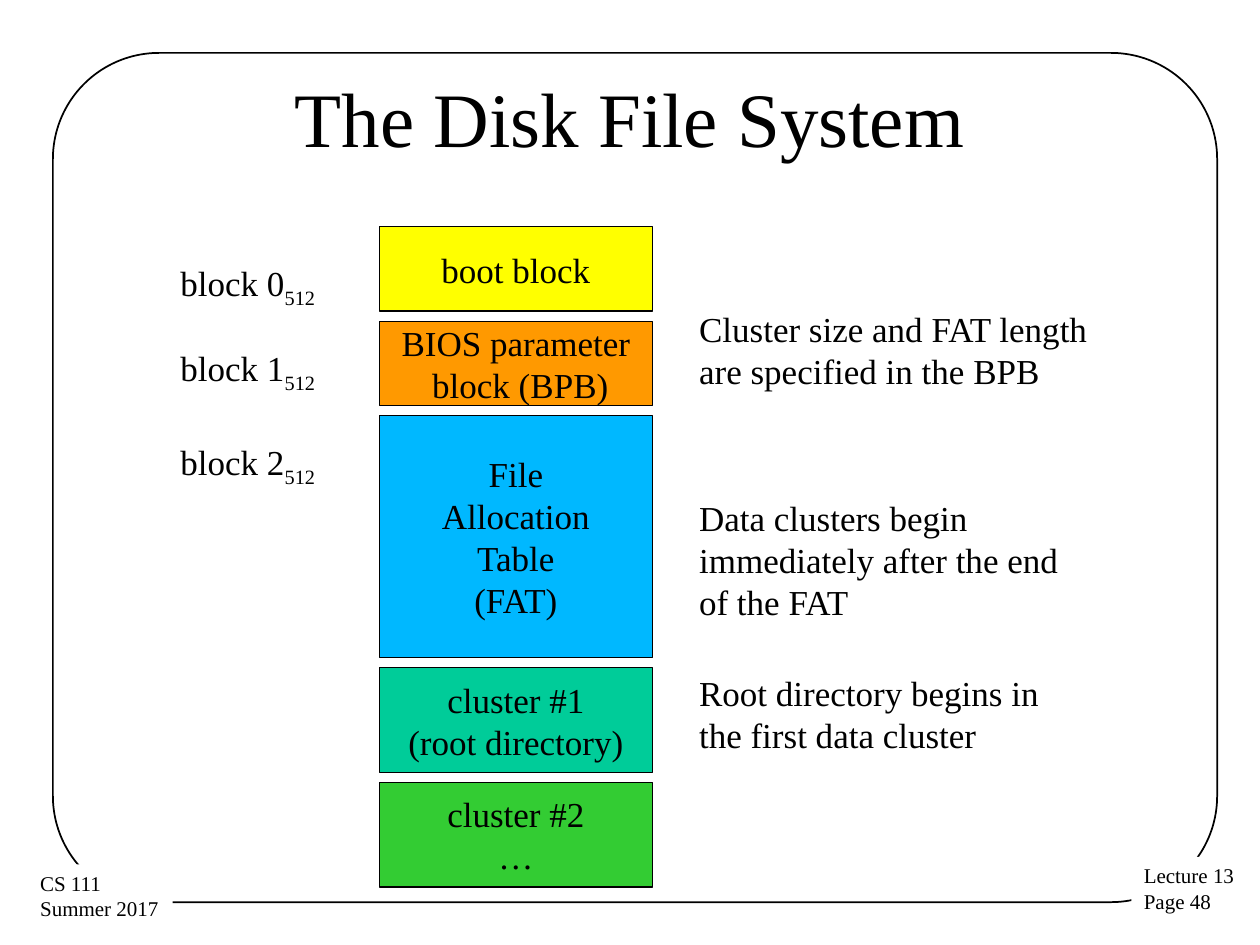
"""Build the slide on the layout of the disk file system."""
from dataclasses import dataclass

from pptx import Presentation
from pptx.dml.color import RGBColor as Rgb
from pptx.enum.shapes import MSO_SHAPE as Shape
from pptx.enum.text import MSO_ANCHOR as Anchor, MSO_AUTO_SIZE as AutoSize, PP_ALIGN as Align
from pptx.util import Inches, Pt


@dataclass(frozen=True)
class Theme:
    font: str = "Times New Roman"
    ink: str = "000000"
    paper: str = "FFFFFF"
    boot: str = "FFFF00"
    bpb: str = "FF9900"
    fat: str = "00B8FF"
    root: str = "00CC99"
    data: str = "33CC33"
    title_size: int = 44
    body_size: int = 20
    footer_size: int = 12


class SlideBuilder:
    def __init__(self, slide, theme):
        self.slide = slide
        self.theme = theme

    def style(self, frame, size, align=Align.LEFT):
        for paragraph in frame.paragraphs:
            paragraph.alignment = align
            for run in paragraph.runs:
                run.font.name = self.theme.font
                run.font.size = Pt(size)
                run.font.color.rgb = Rgb.from_string(self.theme.ink)

    def rectangle(self, kind, box, fill=None, line_width=None):
        shape = self.slide.shapes.add_shape(kind, *map(Inches, box))
        shape.shadow.inherit = False
        if fill:
            shape.fill.solid()
            shape.fill.fore_color.rgb = Rgb.from_string(fill)
        else:
            shape.fill.background()
        if line_width:
            shape.line.color.rgb = Rgb.from_string(self.theme.ink)
            shape.line.width = Pt(line_width)
        else:
            shape.line.fill.background()
        return shape

    def frame(self, box):
        border = self.rectangle(Shape.ROUNDED_RECTANGLE, box, line_width=1)
        border.adjustments[0] = 0.125

    def title(self, text, box):
        heading = self.slide.shapes.title
        heading.left, heading.top, heading.width, heading.height = map(Inches, box)
        heading.text_frame.text = text
        heading.text_frame.vertical_anchor = Anchor.MIDDLE
        self.style(heading.text_frame, self.theme.title_size, Align.CENTER)

    def footer(self, text, box):
        label = self.rectangle(Shape.RECTANGLE, box, self.theme.paper).text_frame
        label.text = text
        label.word_wrap = False
        label.auto_size = AutoSize.SHAPE_TO_FIT_TEXT
        label.vertical_anchor = Anchor.TOP
        self.style(label, self.theme.footer_size)

    def region(self, text, box, fill):
        label = self.rectangle(Shape.RECTANGLE, box, fill, 0.75).text_frame
        label.text = text
        label.word_wrap = False
        label.vertical_anchor = Anchor.MIDDLE
        self.style(label, self.theme.body_size, Align.CENTER)

    def note(self, text, box, align=Align.LEFT, subscript=None):
        label = self.slide.shapes.add_textbox(*map(Inches, box)).text_frame
        label.text = text
        label.word_wrap = True
        label.auto_size = AutoSize.SHAPE_TO_FIT_TEXT
        if subscript:
            suffix = label.paragraphs[0].add_run()
            suffix.text = subscript
            suffix._r.get_or_add_rPr().set("baseline", "-25000")
        self.style(label, self.theme.body_size, align)


def main():
    deck = Presentation()
    deck.slide_width, deck.slide_height = Inches(10), Inches(7.5)
    theme = Theme()
    builder = SlideBuilder(deck.slides.add_slide(deck.slide_layouts[5]), theme)

    builder.frame((0.42, 0.42, 9.24, 6.74))
    builder.footer("Lecture 13\nPage 48", (8.98, 6.8, 0.93, 0.51))
    builder.footer("CS 111\nSummer 2017", (0.22, 6.86, 1.15, 0.51))
    builder.title("The Disk File System", (0.5, 0.3, 9, 1.25))

    regions = [
        ("boot block", 0.67, theme.boot),
        ("BIOS parameter\n block (BPB)", 0.67, theme.bpb),
        ("File\nAllocation\vTable\n(FAT)", 1.92, theme.fat),
        ("cluster #1\n(root directory)", 0.83, theme.root),
        ("cluster #2\n…", 0.83, theme.data),
    ]
    top, gap = 1.8, 0.08
    for text, height, fill in regions:
        builder.region(text, (3.01, top, 2.17, height), fill)
        top += height + gap

    for number, block_top in enumerate((2.03, 2.7, 3.45)):
        builder.note(f"block {number}", (0.6, block_top, 2, 0.43), Align.RIGHT, "512")

    remarks = [
        ("Cluster size and FAT length are specified in the BPB", 2.39, 3.65, 0.77),
        ("Data clusters begin immediately after the end of the FAT", 3.89, 3.26, 1.11),
        ("Root directory begins in the first data cluster", 5.28, 3.26, 0.77),
    ]
    for text, remark_top, width, height in remarks:
        builder.note(text, (5.45, remark_top, width, height))

    deck.save("out.pptx")


if __name__ == "__main__":
    main()
